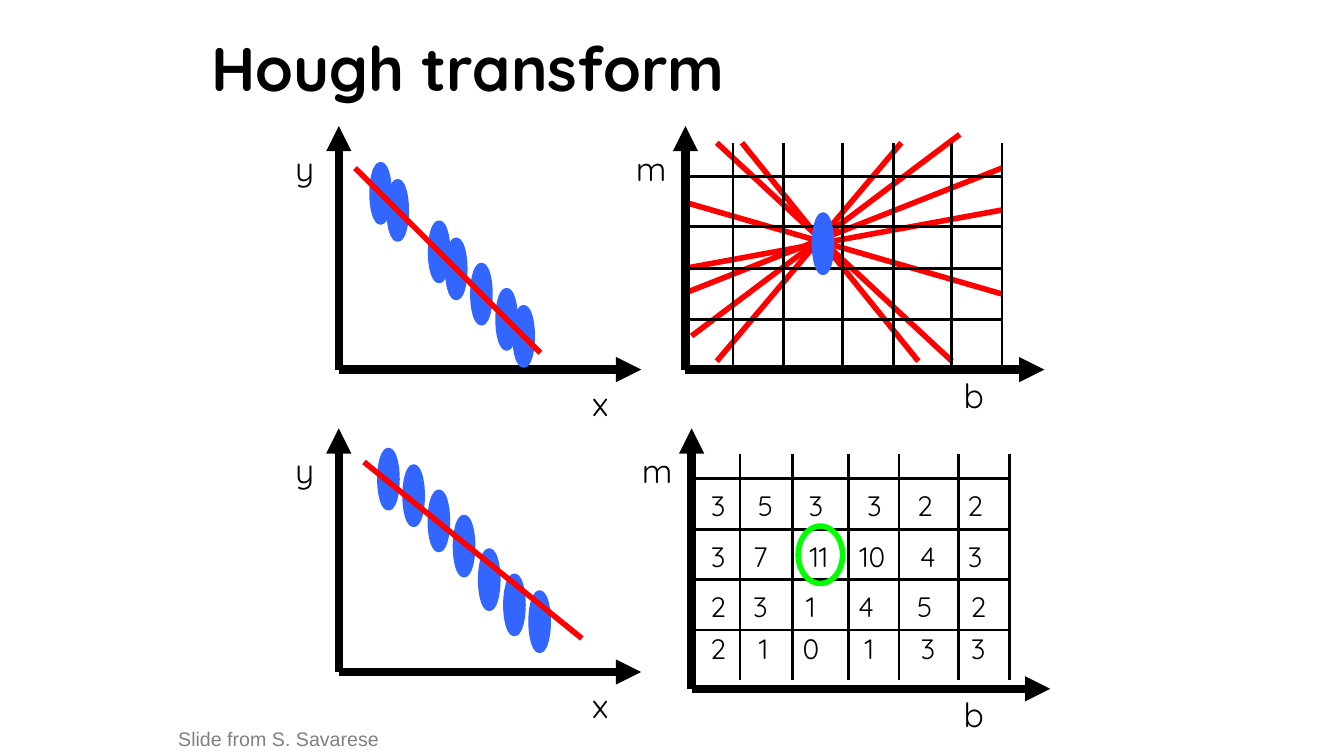
from dataclasses import dataclass

import pptx
import pptx.dml.color
import pptx.enum.shapes
import pptx.enum.text
import pptx.oxml
import pptx.oxml.ns
import pptx.slide
import pptx.text.text
import pptx.util

Pt = pptx.util.Pt
COLORS = {"ink": "000000", "point": "3366FF", "line": "FF0000",
          "peak": "00FF00", "credit": "808080"}
DOT_WIDTH, DOT_HEIGHT = 12.2, 41


@dataclass
class Label:
    text: str
    center: float
    top: float
    width: float = 26.6
    height: float = 36
    size: float = 24


@dataclass
class Axes:
    left: float
    bottom: float
    top: float
    right: float
    labels: list[Label]


@dataclass
class Scatter:
    axes: Axes
    dots: list[tuple[float, float]]
    fit: tuple[float, float, float, float]


@dataclass
class Grid:
    left: float
    top: float
    bottom: float
    columns: list[float]
    rows: list[float]


SCATTERS = [
    Scatter(
        Axes(242, 264, 90, 458, [Label("x", 428.8, 270), Label("y", 217, 102)]),
        [(x, x - 148.2) for x in (368, 355.8, 337.8, 319.8, 307.6, 278, 265.8)],
        (253.6, 120, 386, 252)),
    Scatter(
        Axes(242, 480, 306, 458, [Label("x", 428.8, 486), Label("y", 217, 318)]),
        [(271.4 + 18 * i, top) for i, top in
         enumerate((321.8, 333.6, 351.6, 369.6, 393.6, 411.6, 423.6))][::-1],
        (260, 330, 415.6, 456)),
]
PARAMETER_AXES = Axes(489.6, 264, 90, 746,
                      [Label("b", 695.5, 264, 28.8), Label("m", 464.8, 102, 35.3)])
VOTE_AXES = Axes(494, 492, 306, 750.2,
                 [Label("m", 469, 318, 35.3), Label("b", 695.5, 492, 28.8)])
PARAMETER_LINES = [
    (512, 258, 643.8, 102), (656, 258, 530, 102), (494, 240, 685.6, 96),
    (680, 258, 512, 102), (487.6, 192, 715.8, 150), (487.6, 210, 715.8, 120),
    (487.6, 144, 715.8, 210),
]
PARAMETER_GRID = Grid(487.6, 102, 264, [523.6, 559.6, 602, 638, 679.8, 715.8],
                      [126, 162, 192, 228])
VOTE_GRID = Grid(492.6, 324, 486, [528.6, 566, 606.2, 642.2, 684.6, 720.8],
                 [342, 378, 414, 450])
# Top of each row of votes, then the votes and the centre of each one.
VOTES = [
    (345.6, "3 5 3 3 2 2", (513, 546.8, 582.8, 624.6, 660.6, 696.6)),
    (381.6, "3 7 11 10 4 3", (513, 543.2, 585, 623.2, 662.8, 696.6)),
    (417.6, "2 3 1 4 5 2", (513, 543.2, 579.2, 618.8, 660.6, 698.8)),
    (447.8, "2 1 0 1 3 3", (513, 545.4, 579.2, 621, 662.8, 698.8)),
]


def rgb(name: str) -> pptx.dml.color.RGBColor:
    return pptx.dml.color.RGBColor.from_string(COLORS[name])


def add_line(slide: pptx.slide.Slide, ends: tuple[float, float, float, float],
             color: str, width: float, arrow: bool = False) -> None:
    connector = slide.shapes.add_connector(
        pptx.enum.shapes.MSO_CONNECTOR.STRAIGHT, *(Pt(value) for value in ends))
    connector.line.color.rgb = rgb(color)
    connector.line.width = Pt(width)
    if arrow:
        head = pptx.oxml.parse_xml(
            f'<a:tailEnd {pptx.oxml.ns.nsdecls("a")} type="triangle"/>')
        connector.line._get_or_add_ln().append(head)
    connector._element.spPr.append(
        pptx.oxml.parse_xml(f'<a:effectLst {pptx.oxml.ns.nsdecls("a")}/>'))


def add_ellipse(slide: pptx.slide.Slide, left: float, top: float, width: float,
                height: float, color: str, filled: bool = True) -> None:
    shape = slide.shapes.add_shape(pptx.enum.shapes.MSO_SHAPE.OVAL,
                                   Pt(left), Pt(top), Pt(width), Pt(height))
    shape.shadow.inherit = False
    if filled:
        shape.fill.solid()
        shape.fill.fore_color.rgb = rgb(color)
    else:
        shape.fill.background()
    shape.line.color.rgb = rgb(color)
    shape.line.width = Pt(4)


def add_dot(slide: pptx.slide.Slide, left: float, top: float) -> None:
    add_ellipse(slide, left, top, DOT_WIDTH, DOT_HEIGHT, "point")


def add_text(slide: pptx.slide.Slide, text: str, left: float, top: float,
             width: float, height: float, size: float, font: str = "Quicksand",
             color: str = "ink", bold: bool = False,
             wrap: bool = False) -> pptx.text.text._Paragraph:
    frame = slide.shapes.add_textbox(
        Pt(left), Pt(top), Pt(width), Pt(height)).text_frame
    frame.word_wrap = wrap
    frame.auto_size = pptx.enum.text.MSO_AUTO_SIZE.SHAPE_TO_FIT_TEXT
    paragraph = frame.paragraphs[0]
    run = paragraph.add_run()
    run.text = text
    run.font.name = font
    run.font.size = Pt(size)
    run.font.bold = bold
    run.font.color.rgb = rgb(color)
    return paragraph


def add_label(slide: pptx.slide.Slide, label: Label) -> None:
    paragraph = add_text(slide, label.text, label.center - label.width / 2,
                         label.top, label.width, label.height, label.size)
    paragraph.alignment = pptx.enum.text.PP_ALIGN.CENTER


def add_axes(slide: pptx.slide.Slide, axes: Axes) -> None:
    for end in ((axes.left, axes.top), (axes.right, axes.bottom)):
        add_line(slide, (axes.left, axes.bottom, *end), "ink", 6, arrow=True)
    for label in axes.labels:
        add_label(slide, label)


def add_grid(slide: pptx.slide.Slide, grid: Grid) -> None:
    for y in grid.rows:
        add_line(slide, (grid.left, y, grid.columns[-1], y), "ink", 2)
    for x in grid.columns:
        add_line(slide, (x, grid.top, x, grid.bottom), "ink", 2)


def add_scatter(slide: pptx.slide.Slide, scatter: Scatter) -> None:
    add_axes(slide, scatter.axes)
    for left, top in scatter.dots:
        add_dot(slide, left, top)
    add_line(slide, scatter.fit, "line", 4)


def add_parameter_space(slide: pptx.slide.Slide) -> None:
    for ends in PARAMETER_LINES:
        add_line(slide, ends, "line", 4)
    add_axes(slide, PARAMETER_AXES)
    add_grid(slide, PARAMETER_GRID)
    add_dot(slide, 581.8, 153.6)


def add_vote_table(slide: pptx.slide.Slide) -> None:
    """Draw the accumulator with its votes and ring the highest one."""
    add_axes(slide, VOTE_AXES)
    add_grid(slide, VOTE_GRID)
    for top, votes, centers in VOTES:
        for vote, center in zip(votes.split(), centers):
            width = 26.6 if len(vote) == 1 else 36
            add_label(slide, Label(vote, center, top, width, 31, 20))
    add_ellipse(slide, 570.2, 375.8, 31.7, 41, "peak", filled=False)


def main() -> None:
    presentation = pptx.Presentation()
    presentation.slide_width, presentation.slide_height = Pt(960), Pt(540)
    slide = presentation.slides.add_slide(presentation.slide_layouts[6])
    for scatter in SCATTERS:
        add_scatter(slide, scatter)
    add_parameter_space(slide)
    add_vote_table(slide)
    add_text(slide, "Hough transform", 144, 18, 420, 60, 44, bold=True, wrap=True)
    add_text(slide, "Slide from S. Savarese", 120.2, 515.6, 159, 24.4, 14,
             font="Arial", color="credit")
    presentation.save("out.pptx")


if __name__ == "__main__":
    main()
